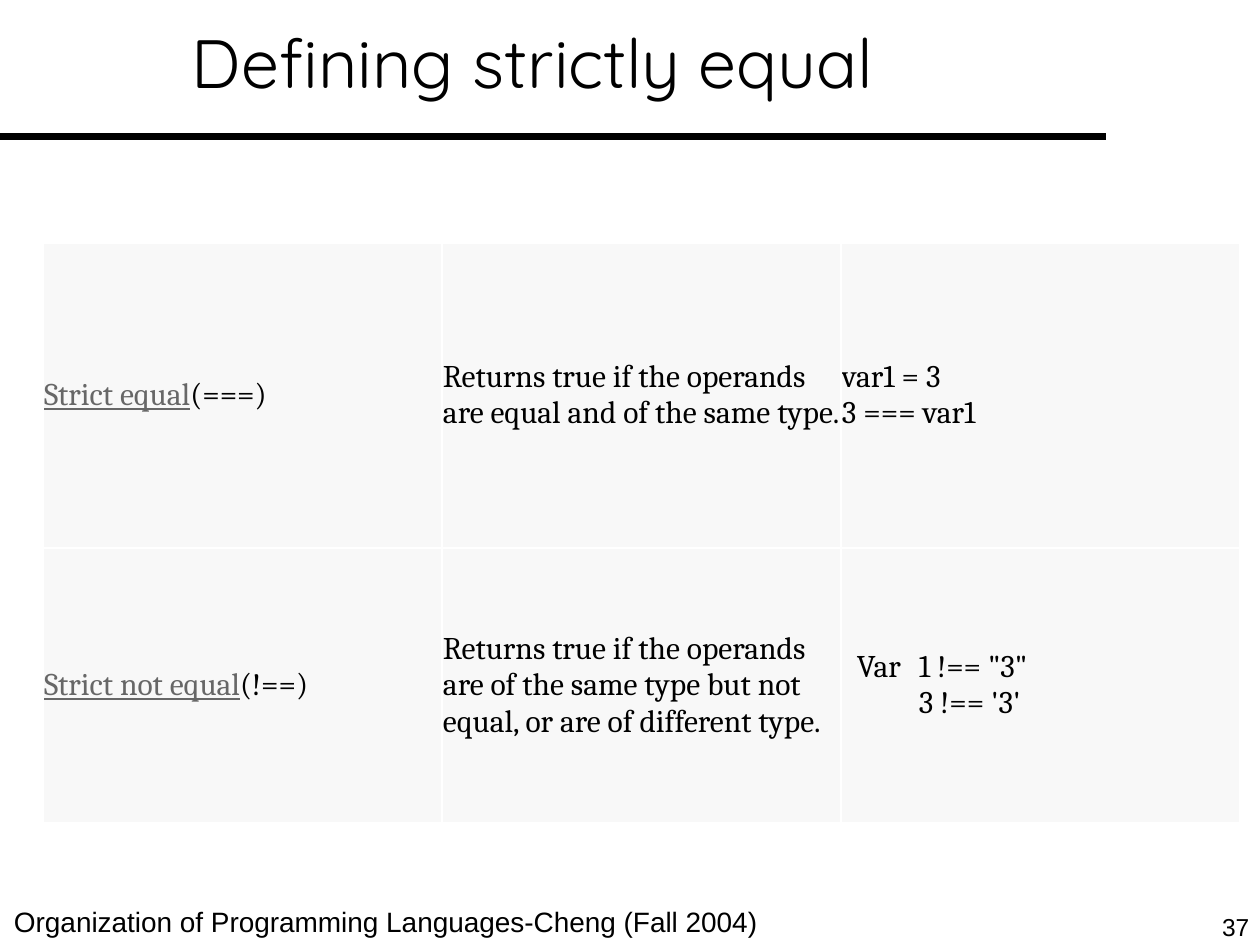
import dataclasses

import lxml.etree
import pptx
import pptx.dml.color
import pptx.enum.shapes
import pptx.enum.text
import pptx.oxml
import pptx.oxml.ns
import pptx.util

EMU_PER_PX = 914400 / 126
BLACK = pptx.dml.color.RGBColor(0x00, 0x00, 0x00)
WHITE = pptx.dml.color.RGBColor(0xFF, 0xFF, 0xFF)
GRAY = pptx.dml.color.RGBColor(0x67, 0x67, 0x67)
CELL_FILL = pptx.dml.color.RGBColor(0xF8, 0xF8, 0xF8)
COLUMN_WIDTH = 399
ROW_HEIGHTS = (305, 275)


@dataclasses.dataclass
class Box:
    left: int
    top: int
    width: int
    height: int


@dataclasses.dataclass
class Operator:
    name: str
    symbol: str
    description: str


OPERATORS = (
    Operator("Strict equal", "(===)",
             "Returns true if the operands are equal and of the same type."),
    Operator("Strict not equal", "(!==)",
             "Returns true if the operands are of the same type but not equal, "
             "or are of different type."),
)


def px(length: int) -> pptx.util.Emu:
    return pptx.util.Emu(round(length * EMU_PER_PX))


def place(box: Box) -> tuple:
    return px(box.left), px(box.top), px(box.width), px(box.height)


def write(paragraph, text: str, *, size: int = 18, font: str = "Cambria",
          color=BLACK, underline: bool = False) -> None:
    run = paragraph.add_run()
    run.text = text
    run.font.size = pptx.util.Pt(size)
    run.font.name = font
    run.font.color.rgb = color
    run.font.bold = False
    run.font.underline = underline


def set_margins(target, horizontal: int, vertical: int) -> None:
    target.margin_left = target.margin_right = px(horizontal)
    target.margin_top = target.margin_bottom = px(vertical)


def add_label(slide, text: str, box: Box, *, size: int, margins: tuple,
              wrap: bool) -> None:
    frame = slide.shapes.add_textbox(*place(box)).text_frame
    frame.word_wrap = wrap
    set_margins(frame, *margins)
    write(frame.paragraphs[0], text, size=size, font="Arial")


def add_title(slide, text: str, box: Box) -> None:
    title = slide.shapes.title
    title.left, title.top, title.width, title.height = place(box)
    frame = title.text_frame
    frame.word_wrap = True
    frame.auto_size = pptx.enum.text.MSO_AUTO_SIZE.NONE
    frame.vertical_anchor = pptx.enum.text.MSO_ANCHOR.BOTTOM
    set_margins(frame, 13, 6)
    frame.paragraphs[0].alignment = pptx.enum.text.PP_ALIGN.LEFT
    write(frame.paragraphs[0], text, size=39, font="Quicksand")


def add_rule(slide, end: int, top: int) -> None:
    rule = slide.shapes.add_connector(
        pptx.enum.shapes.MSO_CONNECTOR.STRAIGHT, 0, px(top), px(end), px(top))
    rule.line.color.rgb = BLACK
    rule.line.width = pptx.util.Pt(4)
    properties = rule._element.spPr
    lxml.etree.SubElement(properties, pptx.oxml.ns.qn("a:effectLst"))


def format_cell(cell) -> None:
    cell.vertical_anchor = pptx.enum.text.MSO_ANCHOR.MIDDLE
    set_margins(cell, 1, 1)
    cell.fill.solid()
    cell.fill.fore_color.rgb = CELL_FILL
    properties = cell._tc.get_or_add_tcPr()
    # Borders must come before the fill
    for position, side in enumerate(("lnL", "lnR", "lnT", "lnB")):
        border = pptx.oxml.parse_xml(
            f'<a:{side} {pptx.oxml.ns.nsdecls("a")} w="12700"><a:solidFill>'
            f'<a:srgbClr val="{WHITE}"/></a:solidFill></a:{side}>')
        properties.insert(position, border)


def add_operator_table(slide, left: int, top: int):
    box = Box(left, top, 3 * COLUMN_WIDTH, sum(ROW_HEIGHTS))
    table = slide.shapes.add_table(len(OPERATORS), 3, *place(box)).table
    table.first_row = table.horz_banding = False
    for column in table.columns:
        column.width = px(COLUMN_WIDTH)
    for row, height, operator in zip(table.rows, ROW_HEIGHTS, OPERATORS):
        row.height = px(height)
        for cell in row.cells:
            format_cell(cell)
        name = row.cells[0].text_frame.paragraphs[0]
        write(name, operator.name, color=GRAY, underline=True)
        write(name, operator.symbol)
        write(row.cells[1].text_frame.paragraphs[0], operator.description)
    return table


def add_examples(table) -> None:
    equal = table.cell(0, 2).text_frame
    write(equal.paragraphs[0], "var1 = 3")
    write(equal.add_paragraph(), "3 === var1")

    # Hanging indent lines up both comparisons after "Var"
    different = table.cell(1, 2).text_frame.paragraphs[0]
    properties = different._p.get_or_add_pPr()
    properties.set("marL", str(px(77)))
    properties.set("indent", str(px(-62)))
    write(different, 'Var\t1 !== "3"')
    different.add_line_break()
    write(different, "3 !== '3'")


def main() -> None:
    presentation = pptx.Presentation()
    presentation.slide_width, presentation.slide_height = px(1260), px(945)
    slide = presentation.slides.add_slide(presentation.slide_layouts[5])

    # Header
    add_rule(slide, end=1106, top=137)
    add_title(slide, "Defining strictly equal", Box(179, 20, 1118, 88))

    # Footer
    add_label(slide, "37", Box(1214, 908, 46, 37), size=14, margins=(8, 4), wrap=True)
    add_label(slide, "Organization of Programming Languages-Cheng (Fall 2004)",
              Box(0, 899, 774, 46), size=16, margins=(14, 6), wrap=False)

    # Operators, their meaning and examples
    add_examples(add_operator_table(slide, left=43, top=243))
    presentation.save("out.pptx")


if __name__ == "__main__":
    main()
